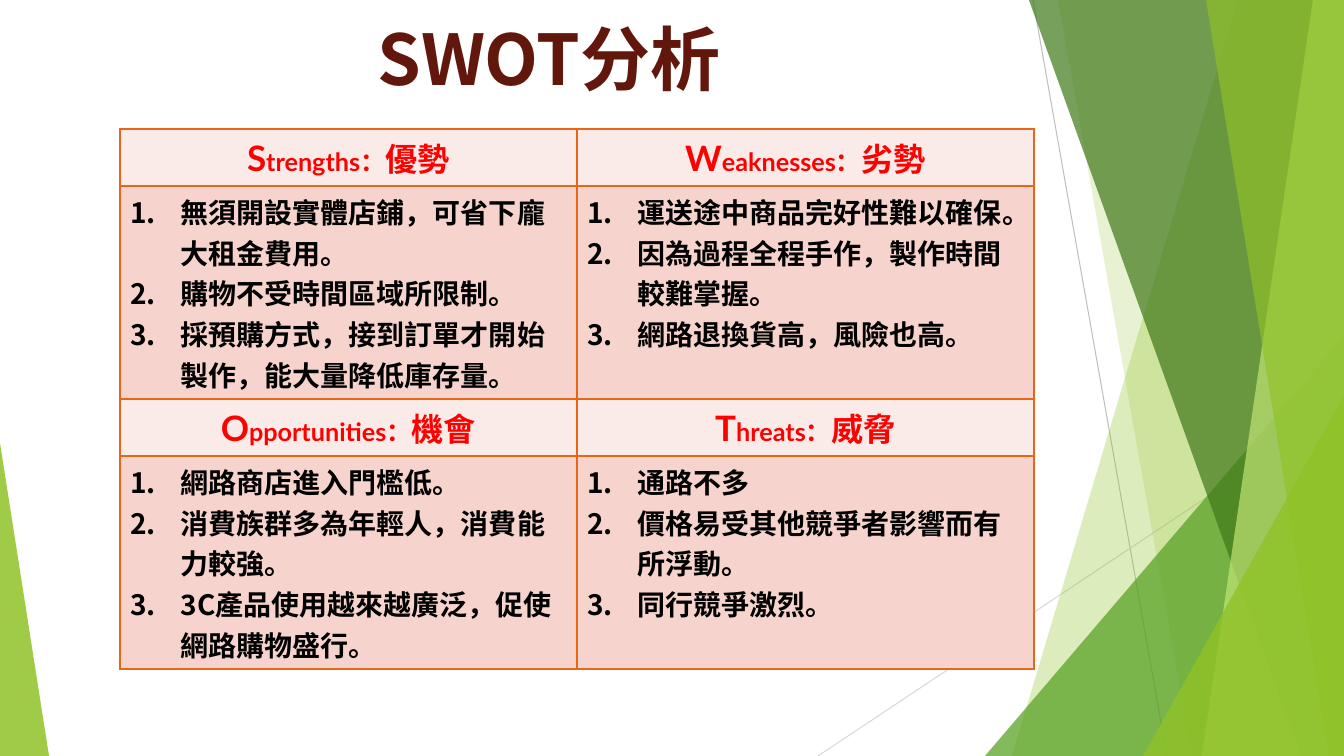
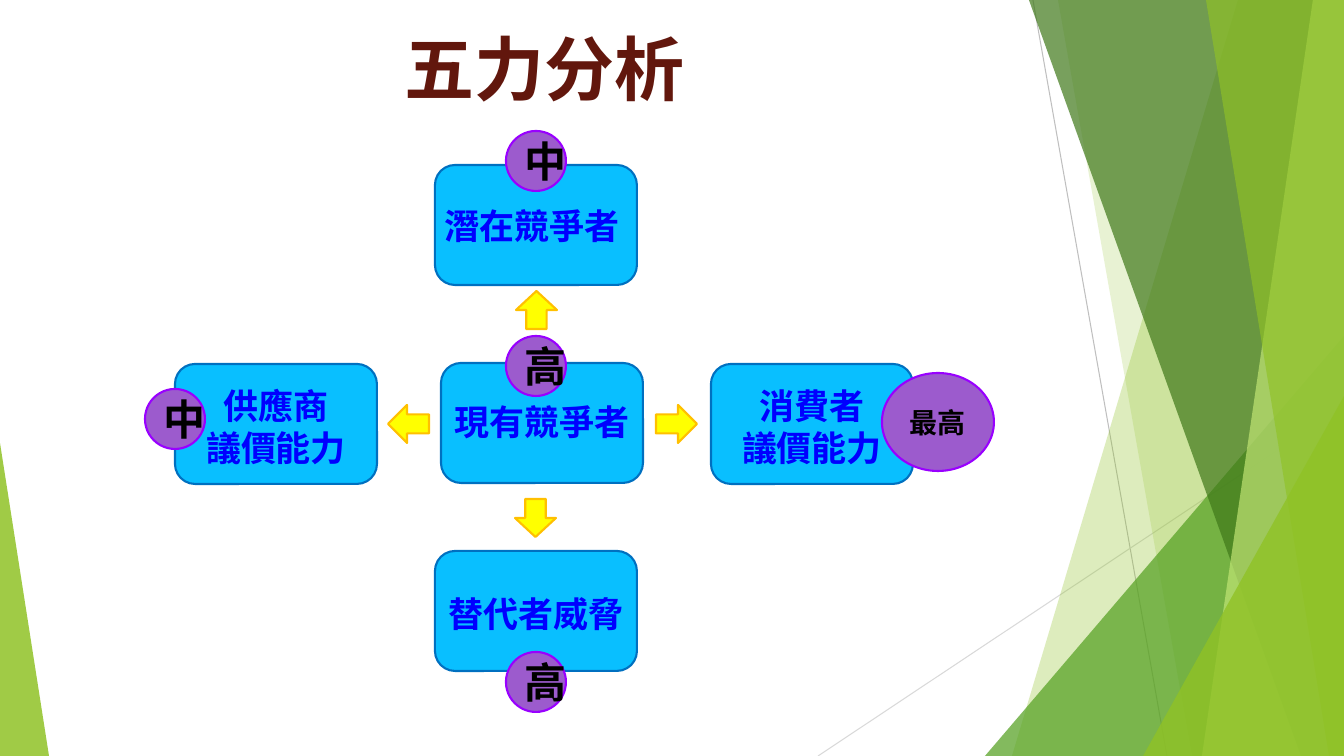
"""Build the SWOT and five forces slides."""
from lxml.etree import SubElement
from pptx import Presentation
from pptx.dml.color import RGBColor
from pptx.enum.shapes import MSO_CONNECTOR, MSO_SHAPE as Preset
from pptx.enum.text import MSO_ANCHOR as Anchor, PP_ALIGN as Align
from pptx.oxml.ns import qn
from pptx.util import Emu, Pt

WIDTH, HEIGHT = 1344, 756
EMU_PER_PX = 12192000 / WIDTH
LATIN_FACE, CJK_FACE = "Lato", "Noto Sans CJK SC"

LIME = RGBColor(0x90, 0xC2, 0x26)
LEAF = RGBColor(0x54, 0xA0, 0x21)
FOREST = RGBColor(0x3F, 0x78, 0x19)
PALE_LIME = RGBColor(0xC0, 0xE4, 0x74)
GRAY = RGBColor(0xBF, 0xBF, 0xBF)
LIGHT_GRAY = RGBColor(0xD9, 0xD9, 0xD9)
MAROON = RGBColor(0x62, 0x17, 0x0D)
RED = RGBColor(0xFF, 0x00, 0x00)
BLACK = RGBColor(0x00, 0x00, 0x00)
ORANGE = RGBColor(0xE7, 0x66, 0x18)
HEADER_PINK = RGBColor(0xFA, 0xEA, 0xE8)
BODY_PINK = RGBColor(0xF6, 0xD3, 0xCC)
SKY = RGBColor(0x09, 0xBF, 0xFF)
BLUE = RGBColor(0x00, 0x70, 0xC0)
DEEP_BLUE = RGBColor(0x00, 0x00, 0xFF)
YELLOW = RGBColor(0xFF, 0xFF, 0x00)
GOLD = RGBColor(0xFF, 0xC0, 0x00)
PURPLE = RGBColor(0x9C, 0x5B, 0xCD)
VIOLET = RGBColor(0x99, 0x00, 0xFF)

SWOT = [
    [("S", "trengths：", "優勢",
      ["無須開設實體店鋪，可省下龐大租金費用。", "購物不受時間區域所限制。",
       "採預購方式，接到訂單才開始製作，能大量降低庫存量。"]),
     ("W", "eaknesses：", "劣勢",
      ["運送途中商品完好性難以確保。", "因為過程全程手作，製作時間較難掌握。",
       "網路退換貨高，風險也高。"])],
    [("O", "pportunities：", "機會",
      ["網路商店進入門檻低。", "消費族群多為年輕人，消費能力較強。",
       "3C產品使用越來越廣泛，促使網路購物盛行。"]),
     ("T", "hreats：", "威脅",
      ["通路不多", "價格易受其他競爭者影響而有所浮動。", "同行競爭激烈。"])],
]
FORCES = [
    (441, 363, 393, Align.CENTER, ["現有競爭者"]),
    (435, 165, 197, Align.LEFT, ["潛在競爭者"]),
    (175, 364, 376, Align.CENTER, ["供應商", "議價能力"]),
    (435, 551, 585, Align.CENTER, ["替代者威脅"]),
    (711, 364, 376, Align.CENTER, ["消費者", "議價能力"]),
]
ARROWS = [
    (Preset.UP_ARROW, 516, 291),
    (Preset.RIGHT_ARROW, 656, 405),
    (Preset.LEFT_ARROW, 388, 405),
    (Preset.DOWN_ARROW, 515, 499),
]
RATINGS = [
    (506, 131, 60, 60, "中", 30),
    (145, 389, 60, 60, "中", 30),
    (506, 652, 60, 60, "高", 30),
    (882, 373, 112, 98, "最高", 20),
    (506, 336, 60, 60, "高", 30),
]


def px(*lengths):
    return [Emu(round(length * EMU_PER_PX)) for length in lengths]


class Painter:
    def __init__(self):
        self.deck = Presentation()
        self.deck.slide_width, self.deck.slide_height = px(WIDTH, HEIGHT)
        self.page = None

    def new_page(self, title, left, top):
        self.page = self.deck.slides.add_slide(self.deck.slide_layouts[6])
        self.backdrop()
        frame = self.text_box(left, top, 948, 94)
        frame.vertical_anchor = Anchor.MIDDLE
        self.set_lines(frame, [title], 50, MAROON)

    def backdrop(self):
        self.line(1033, 0, 1167, HEIGHT, GRAY)
        self.line(WIDTH, 406, 818, HEIGHT, LIGHT_GRAY)
        self.facet(1238, 1012, LIME, 30)
        self.facet(1058, 1192, LIME, 20)
        self.wedge(985, 336, 359, 1, LEAF, 72)
        self.facet(1029, 1301, FOREST, 70)
        self.facet(1313, 1202, PALE_LIME, 70)
        self.facet(1206, 1329, LIME, 65)
        self.wedge(1143, 396, 201, 1, LIME, 80)
        self.wedge(0, 443, 49, 0, LIME, 85)

    def line(self, x1, y1, x2, y2, color):
        line = self.page.shapes.add_connector(
            MSO_CONNECTOR.STRAIGHT, *px(x1, y1, x2, y2))
        line.line.color.rgb = color
        line.line.width = Pt(0.75)
        SubElement(line._element.spPr, qn("a:effectLst"))

    def facet(self, top_x, bottom_x, color, opacity):
        outline = self.page.shapes.build_freeform(*px(top_x, 0))
        corners = [(WIDTH, 0), (WIDTH, HEIGHT), (bottom_x, HEIGHT)]
        outline.add_line_segments([px(*corner) for corner in corners])
        self.paint(outline.convert_to_shape(), color, opacity=opacity)

    def wedge(self, left, top, width, apex, color, opacity):
        shape = self.shape(Preset.ISOSCELES_TRIANGLE, left, top, width,
                           HEIGHT - top, color, opacity=opacity)
        shape.adjustments[0] = apex

    def shape(self, preset, left, top, width, height, color, **look):
        shape = self.page.shapes.add_shape(
            preset, *px(left, top, width, height))
        self.paint(shape, color, **look)
        return shape

    def paint(self, shape, color, border=None, opacity=100):
        shape.shadow.inherit = False
        shape.fill.solid()
        shape.fill.fore_color.rgb = color
        if opacity < 100:
            tint = shape._element.spPr.find(qn("a:solidFill"))[0]
            SubElement(tint, qn("a:alpha"), val=str(opacity * 1000))
        if border is None:
            shape.line.fill.background()
        else:
            shape.line.color.rgb = border
            shape.line.width = Pt(1.5)

    def text_box(self, left, top, width, height):
        box = self.page.shapes.add_textbox(*px(left, top, width, height))
        box.text_frame.word_wrap = True
        return box.text_frame

    def set_lines(self, frame, lines, size, color, align=Align.CENTER,
                  spacing=None):
        for index, line in enumerate(lines):
            para = frame.add_paragraph() if index else frame.paragraphs[0]
            para.text = line
            para.line_spacing = spacing
            self.style(para, color, align, size)

    def style(self, para, color, align, size=None, face=CJK_FACE):
        para.alignment = align
        font = para.font
        font.name, font.bold = face, True
        font.color.rgb = color
        if size:
            font.size = Pt(size)
        defaults = para._p.get_or_add_pPr().find(qn("a:defRPr"))
        latin = defaults.find(qn("a:latin"))
        east_asian = SubElement(defaults, qn("a:ea"), typeface=CJK_FACE)
        latin.addnext(east_asian)

    def number(self, para):
        properties = para._p.get_or_add_pPr()
        properties.set("marL", "457200")
        properties.set("indent", "-457200")
        bullet = SubElement(properties, qn("a:buAutoNum"),
                            type="arabicPeriod")
        properties.find(qn("a:defRPr")).addprevious(bullet)

    def cell(self, cell, color):
        properties = cell._tc.get_or_add_tcPr()
        for side in ("lnL", "lnR", "lnT", "lnB"):
            border = SubElement(properties, qn(f"a:{side}"), w=str(Pt(1)))
            fill = SubElement(border, qn("a:solidFill"))
            SubElement(fill, qn("a:srgbClr"), val=str(ORANGE))
        cell.fill.solid()
        cell.fill.fore_color.rgb = color
        return cell.text_frame

    def swot_table(self, left, top, column_width, row_heights):
        rows, columns = len(SWOT) * 2, len(SWOT[0])
        table = self.page.shapes.add_table(
            rows, columns, *px(left, top, column_width * columns,
                               sum(row_heights) * len(SWOT))).table
        table.first_row = table.horz_banding = False
        for column in table.columns:
            column.width = px(column_width)[0]
        for index, row in enumerate(table.rows):
            row.height = px(row_heights[index % 2])[0]
        for band, quadrants in enumerate(SWOT):
            for column, (initial, rest, name, points) in enumerate(quadrants):
                frame = self.cell(table.cell(band * 2, column), HEADER_PINK)
                para = frame.paragraphs[0]
                for text, size in ((initial, 25), (rest, 18), (name, 23)):
                    span = para.add_run()
                    span.text = text
                    span.font.size = Pt(size)
                self.style(para, RED, Align.CENTER, face=LATIN_FACE)
                frame = self.cell(table.cell(band * 2 + 1, column), BODY_PINK)
                self.set_lines(frame, points, 20, BLACK, Align.LEFT)
                for para in frame.paragraphs:
                    self.number(para)

    def label(self, left, top, lines, align):
        frame = self.text_box(left, top, 202, 10 + 42 * len(lines))
        frame.margin_top, frame.margin_bottom = px(8, 0)
        self.set_lines(frame, lines, 25, DEEP_BLUE, align, Pt(30))

    def rating(self, left, top, width, height, text, size):
        shape = self.shape(Preset.FLOWCHART_CONNECTOR, left, top, width,
                           height, PURPLE, border=VIOLET)
        shape.text_frame.vertical_anchor = Anchor.MIDDLE
        self.set_lines(shape.text_frame, [text], size, BLACK)


def main():
    painter = Painter()
    painter.new_page("SWOT分析", 75, 10)
    painter.swot_table(120, 129, 457, (57, 213))

    painter.new_page("五力分析", 71, 20)
    for left, top, _, _, _ in FORCES:
        painter.shape(Preset.ROUNDED_RECTANGLE, left, top, 202, 120,
                      SKY, border=BLUE)
    for preset, left, top in ARROWS:
        painter.shape(preset, left, top, 41, 38, YELLOW, border=GOLD)
    for left, _, label_top, align, lines in FORCES:
        painter.label(left, label_top, lines, align)
    for rating in RATINGS:
        painter.rating(*rating)
    painter.deck.save("out.pptx")


if __name__ == "__main__":
    main()
